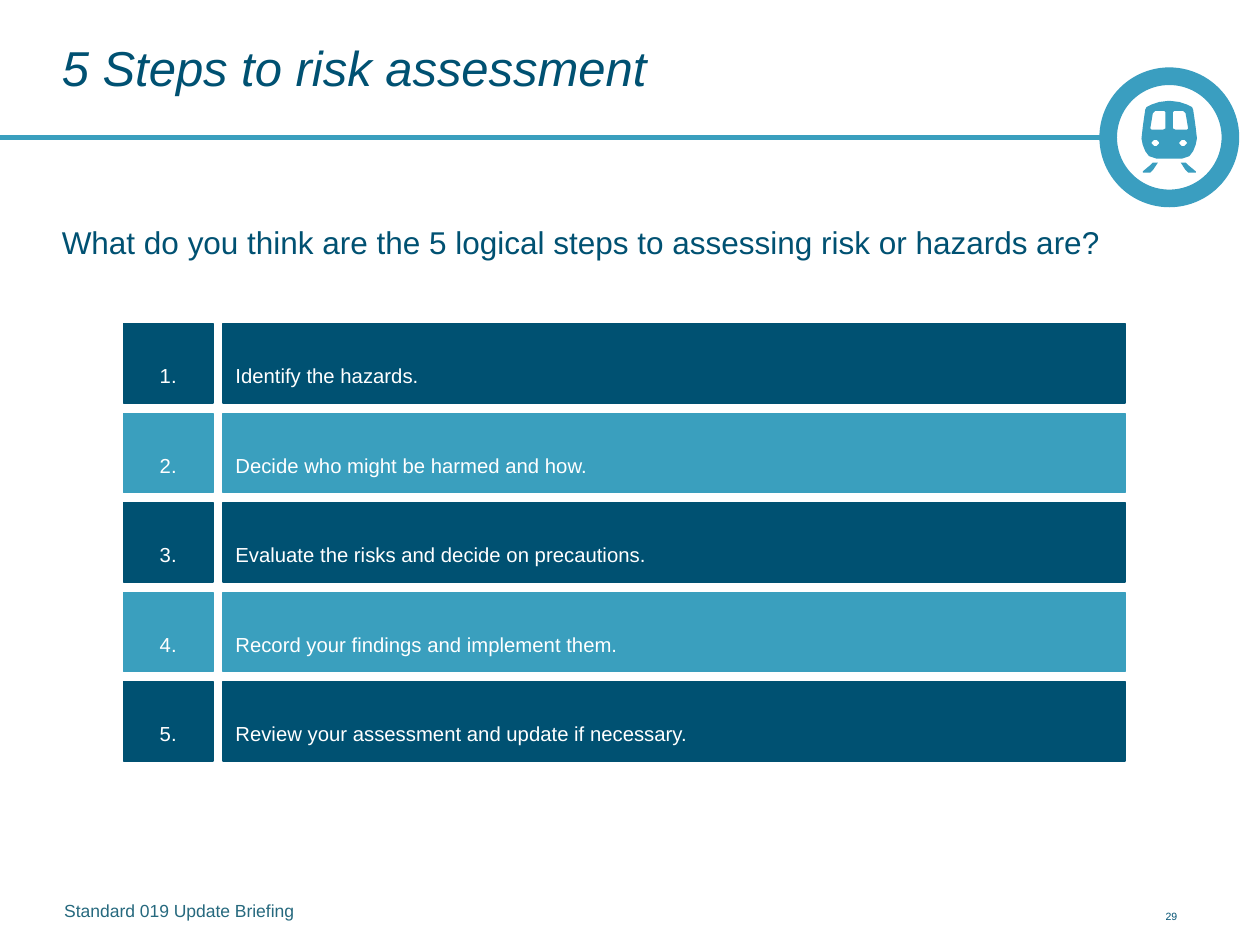
from pptx import Presentation
from pptx.dml.color import RGBColor
from pptx.enum.shapes import MSO_CONNECTOR, MSO_SHAPE
from pptx.enum.text import MSO_ANCHOR, PP_ALIGN
from pptx.oxml.ns import qn
from pptx.util import Inches, Pt
from lxml import etree

TOP, MIDDLE, BOTTOM = MSO_ANCHOR.TOP, MSO_ANCHOR.MIDDLE, MSO_ANCHOR.BOTTOM
LEFT, CENTER = PP_ALIGN.LEFT, PP_ALIGN.CENTER
NAVY = RGBColor(0x00, 0x51, 0x72)
TEAL = RGBColor(0x3A, 0x9F, 0xBE)
ICON_BLUE = RGBColor(0x3A, 0x9E, 0xC0)
FOOTER_TEAL = RGBColor(0x26, 0x69, 0x7E)
WHITE = RGBColor(0xFF, 0xFF, 0xFF)

presentation = Presentation()
presentation.slide_width, presentation.slide_height = Inches(10), Inches(7.5)
slide = presentation.slides.add_slide(presentation.slide_layouts[6])
shapes = slide.shapes


def write(shape, text, size, color, anchor=TOP, align=LEFT, insets=(0, 0, 0, 0)):
    frame = shape.text_frame
    frame.text = text
    frame.word_wrap = True
    frame.vertical_anchor = anchor
    (frame.margin_left, frame.margin_top,
     frame.margin_right, frame.margin_bottom) = map(Inches, insets)
    paragraph = frame.paragraphs[0]
    paragraph.alignment = align
    font = paragraph.runs[0].font
    font.name, font.size, font.color.rgb = "Arial", Pt(size), color
    return paragraph


def draw_outline(contours):
    """Fill closed contours given in inches; inner contours become holes."""
    points = [[(Inches(x), Inches(y)) for x, y in contour] for contour in contours]
    builder = shapes.build_freeform(*points[0][0], scale=1.0)
    builder.add_line_segments(points[0][1:], close=True)
    for hole in points[1:]:
        builder.move_to(*hole[0])
        builder.add_line_segments(hole[1:], close=True)
    shape = builder.convert_to_shape()
    shape.shadow.inherit = False
    shape.fill.solid()
    shape.fill.fore_color.rgb = ICON_BLUE
    shape.line.fill.background()


# Header rule
AXIS_X, AXIS_Y, RING = 9.28, 1.09, 1.11
rule = shapes.add_connector(MSO_CONNECTOR.STRAIGHT, 0, Inches(AXIS_Y),
                            Inches(8.78), Inches(AXIS_Y))
rule.line.color.rgb, rule.line.width = TEAL, Pt(3)
etree.SubElement(rule._element.spPr, qn("a:effectLst"))

# Ring around the train
ring = shapes.add_shape(MSO_SHAPE.DONUT, Inches(AXIS_X - RING / 2),
                        Inches(AXIS_Y - RING / 2), Inches(RING), Inches(RING))
ring.adjustments[0] = 0.126
ring.shadow.inherit = False
ring.fill.solid()
ring.fill.fore_color.rgb = ICON_BLUE
ring.line.fill.background()

# Train: the right half is mirrored about the vertical axis
half_body = [(0, 0.8), (0.08, 0.81), (0.14, 0.83), (0.18, 0.85), (0.19, 0.87),
             (0.2, 0.94), (0.21, 1.01), (0.22, 1.1), (0.21, 1.15), (0.19, 1.2),
             (0.16, 1.24), (0.13, 1.25), (0.1, 1.26)]
window = [(0.04, 0.88), (0.11, 0.88), (0.13, 0.9), (0.15, 1.02), (0.14, 1.03),
          (0.05, 1.03), (0.03, 1.02), (0.03, 0.89)]
lamp = [(0.1, 1.11), (0.12, 1.11), (0.14, 1.13), (0.14, 1.14),
        (0.12, 1.16), (0.1, 1.16), (0.08, 1.14), (0.08, 1.13)]
rail = [(0.09, 1.29), (0.13, 1.29), (0.15, 1.31), (0.21, 1.36),
        (0.21, 1.37), (0.15, 1.37), (0.13, 1.35)]
mirrored = {}
for name, part in (("body", half_body), ("window", window), ("lamp", lamp), ("rail", rail)):
    mirrored[name] = [[(AXIS_X + side * x, y) for x, y in part] for side in (1, -1)]
right_body, left_body = mirrored["body"]
draw_outline([right_body + left_body[:0:-1], *mirrored["window"], *mirrored["lamp"]])
for sleeper in mirrored["rail"]:
    draw_outline([sleeper])

# Title, question, page number and footer
texts = [
    ("5 Steps to risk assessment", (0.49, 0.22, 7.92, 0.7), 28, NAVY, MIDDLE),
    ("What do you think are the 5 logical steps to assessing risk or hazards are?",
     (0.49, 1.77, 9.02, 0.5), 18, NAVY, TOP),
    ("29", (9.25, 7.22, 0.49, 0.16), 6, NAVY, TOP),
    ("Standard 019 Update Briefing", (0.51, 7.14, 8.65, 0.24), 10, FOOTER_TEAL, TOP),
]
for text, box, size, color, anchor in texts:
    paragraph = write(shapes.add_textbox(*map(Inches, box)), text, size, color, anchor)
    if anchor == MIDDLE:
        paragraph.line_spacing = 0.85
        paragraph.runs[0].font.italic = True

# Numbered steps: one row each, in alternating colours
STEPS = ["Identify the hazards.",
         "Decide who might be harmed and how.",
         "Evaluate the risks and decide on precautions.",
         "Record your findings and implement them.",
         "Review your assessment and update if necessary."]
FIRST_ROW, ROW_PITCH, ROW_HEIGHT = 2.57, 0.71, 0.63
NUMBER_COLUMN, STEP_COLUMN = (0.98, 0.71), (1.77, 7.16)
for row, step in enumerate(STEPS):
    color = (NAVY, TEAL)[row % 2]
    cells = ((f"{row + 1}.", NUMBER_COLUMN, CENTER), (step, STEP_COLUMN, LEFT))
    for text, (left, width), align in cells:
        bar = shapes.add_shape(MSO_SHAPE.RECTANGLE, Inches(left),
                               Inches(FIRST_ROW + row * ROW_PITCH),
                               Inches(width), Inches(ROW_HEIGHT))
        bar.shadow.inherit = False
        bar.fill.solid()
        bar.fill.fore_color.rgb = color
        bar.line.color.rgb, bar.line.width = color, Pt(0.75)
        write(bar, text, 11.6, WHITE, BOTTOM, align, (0.1, 0.05, 0.1, 0.12))

presentation.save("out.pptx")
